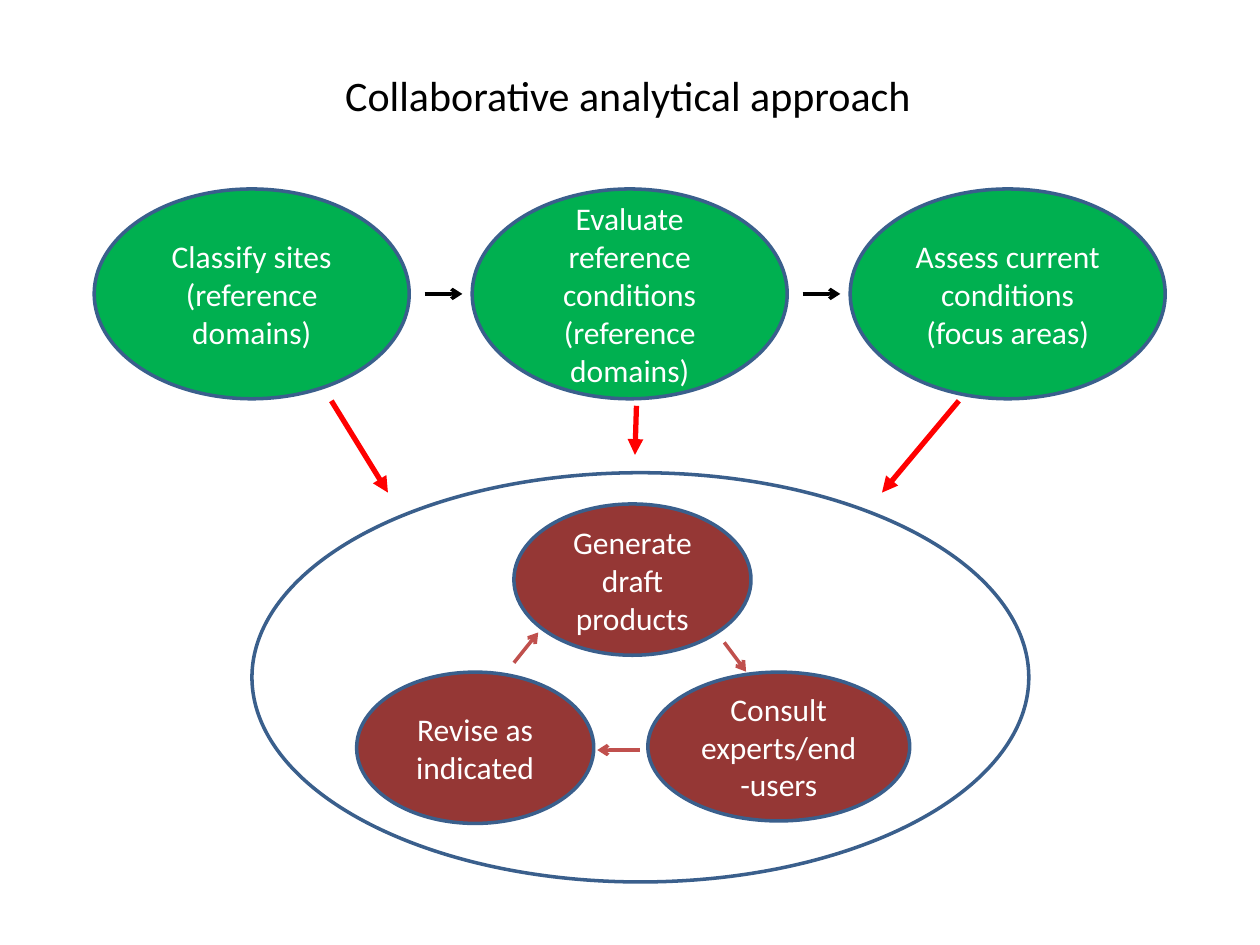
from pptx import Presentation
from pptx.dml.color import RGBColor
from pptx.enum.shapes import MSO_CONNECTOR as Conn, MSO_SHAPE as Shape
from pptx.enum.text import MSO_ANCHOR as Anchor, PP_ALIGN as Align
from pptx.oxml.ns import qn
from pptx.util import Cm, Pt
from lxml.etree import SubElement

TITLE = "Collaborative analytical approach"
STEPS = [
    "Classify sites (reference domains)",
    "Evaluate reference conditions (reference domains)",
    "Assess current conditions (focus areas)",
]
# Text, then left, top, width, height in cm
CYCLE = [
    ("Generate draft products", (10.36, 10.16, 4.78, 3.05)),
    ("Consult experts/end-users", (13.06, 13.55, 5.28, 3)),
    ("Revise as indicated", (7.19, 13.55, 4.78, 3.05)),
]
# Arrows: x and y of the start, then of the end, in cm
TURNS = [
    (14.6, 12.95, 15.04, 13.54),
    (12.9, 15.12, 12.04, 15.12),
    (10.36, 13.36, 10.85, 12.75),
]
FEEDS = [
    (6.68, 8.08, 7.82, 9.93),
    (19.33, 8.08, 17.78, 9.93),
    (12.83, 8.18, 12.8, 9.17),
]
RING = (5.08, 9.53, 15.66, 8.25)
LEFT, TOP, WIDE, HIGH = 1.9, 3.81, 6.35, 4.23
GAP = 1.27

GREEN, BROWN, EDGE = "00B050", "953735", "3A5F8C"
BLACK, WHITE, RED, ROSE = "000000", "FFFFFF", "FF0000", "C0504D"


def tint(fmt, color):
    """Give a fill a solid colour."""
    fmt.solid()
    fmt.fore_color.rgb = RGBColor.from_string(color)


def write(shape, text, size=18, color=WHITE, align=Align.CENTER, anchor=Anchor.MIDDLE):
    frame = shape.text_frame
    frame.word_wrap = True
    frame.vertical_anchor = anchor
    para = frame.paragraphs[0]
    para.alignment = align
    run = para.add_run()
    run.text = text
    run.font.name = "Calibri"
    run.font.size = Pt(size)
    tint(run.font.fill, color)


def oval(slide, box, fill=None):
    shape = slide.shapes.add_shape(Shape.OVAL, *map(Cm, box))
    shape.shadow.inherit = False
    if fill:
        tint(shape.fill, fill)
    else:
        shape.fill.background()
    tint(shape.line.fill, EDGE)
    shape.line.width = Pt(2)
    return shape


def arrow(slide, ends, color, width=2, head="arrow"):
    link = slide.shapes.add_connector(Conn.STRAIGHT, *map(Cm, ends))
    tint(link.line.fill, color)
    link.line.width = Pt(width)
    props = link._element.spPr
    SubElement(props.find(qn("a:ln")), qn("a:tailEnd"), type=head)
    SubElement(props, qn("a:effectLst"))


def main():
    deck = Presentation()
    deck.slide_width, deck.slide_height = Cm(25.4), Cm(19.05)
    slide = deck.slides.add_slide(deck.slide_layouts[6])

    title = slide.shapes.add_textbox(Cm(6.71), Cm(1.27), Cm(11.96), Cm(1.27))
    tint(title.fill, WHITE)
    write(title, TITLE, size=24, color=BLACK, align=Align.LEFT, anchor=Anchor.TOP)

    for i, text in enumerate(STEPS):
        x = LEFT + i * (WIDE + GAP)
        write(oval(slide, (x, TOP, WIDE, HIGH), GREEN), text)
        if i:
            mid = TOP + HIGH / 2
            arrow(slide, (x - 0.96, mid, x - 0.2, mid), BLACK)

    for text, box in CYCLE:
        write(oval(slide, box, BROWN), text)
    for ends in TURNS:
        arrow(slide, ends, ROSE)

    oval(slide, RING)
    for ends in FEEDS:
        arrow(slide, ends, RED, width=3, head="triangle")

    deck.save("out.pptx")


if __name__ == "__main__":
    main()
